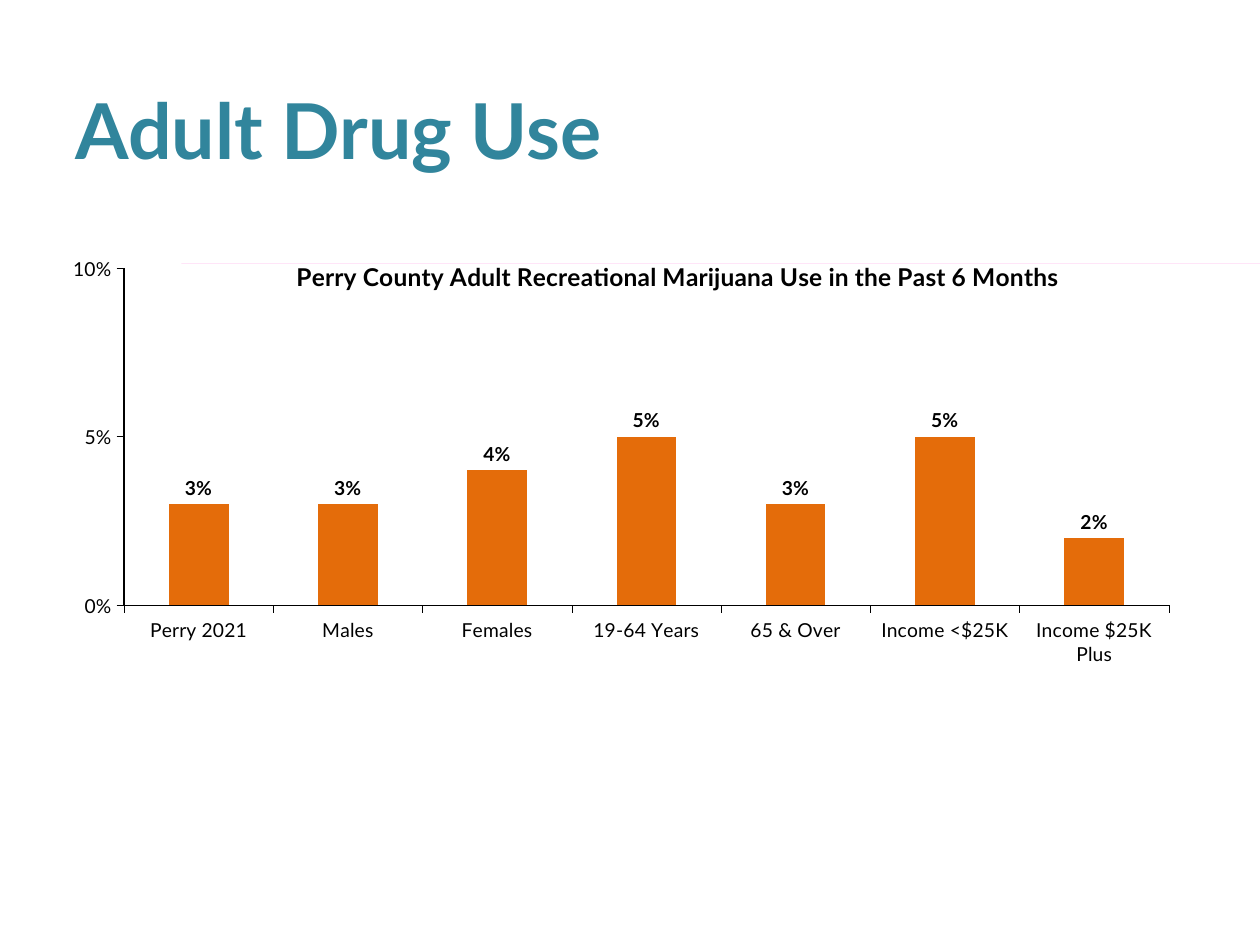
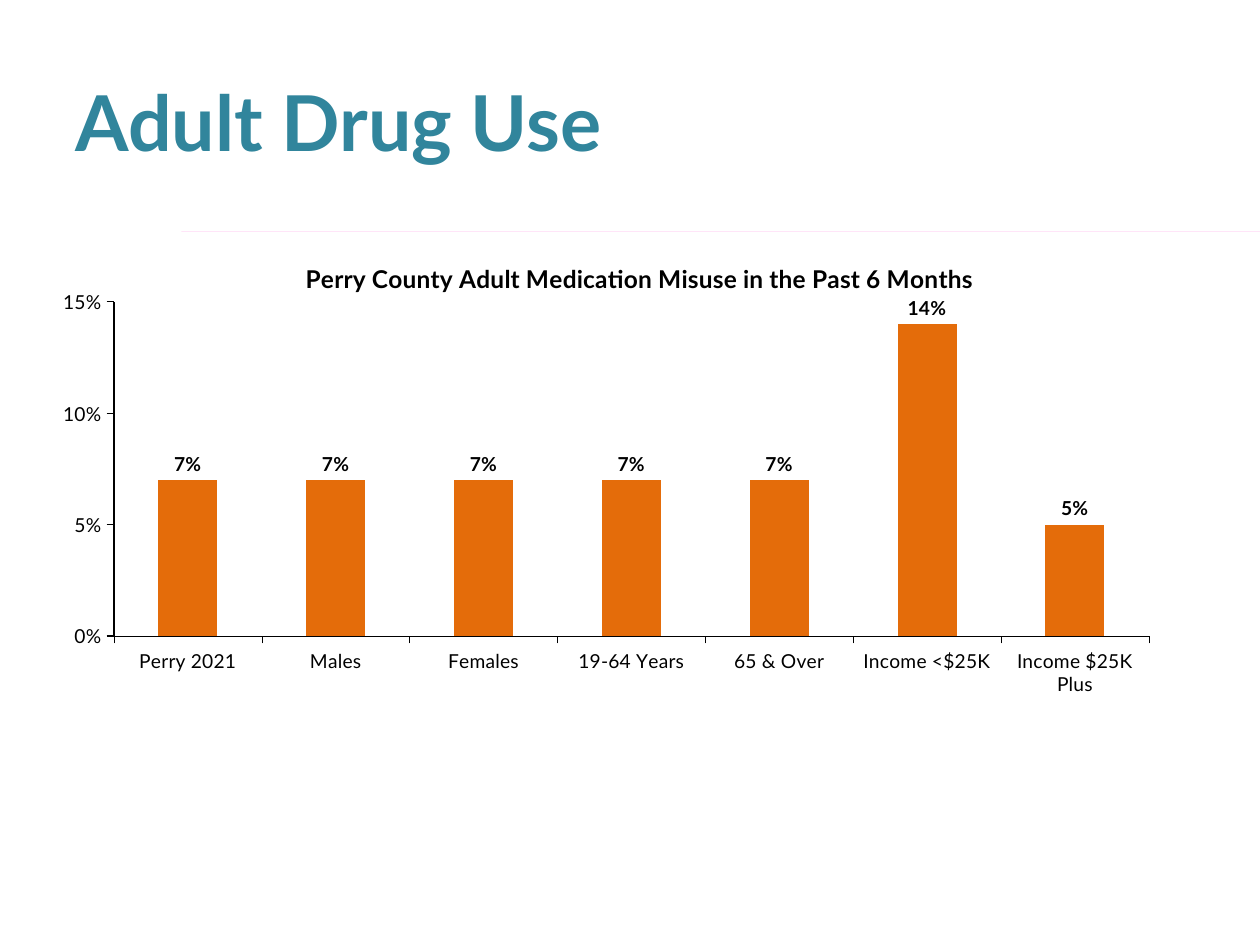
from pptx import Presentation
from pptx.chart.data import CategoryChartData
from pptx.dml.color import RGBColor
from pptx.enum.chart import XL_CHART_TYPE, XL_LABEL_POSITION, XL_TICK_LABEL_POSITION, XL_TICK_MARK
from pptx.enum.shapes import MSO_SHAPE
from pptx.enum.text import MSO_ANCHOR
from pptx.oxml import parse_xml
from pptx.oxml.ns import nsdecls
from pptx.util import Inches, Pt

# Shared style
FONT = "Lato"
TEAL = "31859C"
ORANGE = "E46C0A"
PINK = "FF33CC"
BLACK = "000000"
SLIDE_TITLE = "Adult Drug Use"
PERCENT = "0%"
GROUPS = ["Perry 2021", "Males", "Females", "19-64 Years", "65 & Over",
          "Income <$25K", "Income $25K Plus"]
PLOT_AREA = {"x": 0.045, "y": 0.13, "w": 0.94, "h": 0.725}


def color(hex_code):
    return RGBColor.from_string(hex_code)


def box(left, top, width, height):
    return [Inches(length) for length in (left, top, width, height)]


def style_font(font, size, hex_code=BLACK, bold=False):
    font.name = FONT
    font.size = Pt(size)
    font.bold = bold
    font.color.rgb = color(hex_code)


def manual_layout(fractions, inner=False):
    """Layout element that places a chart part by fractions of the chart."""
    target = '<c:layoutTarget val="inner"/>' if inner else ""
    modes = "".join(f'<c:{key}Mode val="edge"/>' for key in "xy")
    values = "".join(f'<c:{key} val="{value}"/>' for key, value in fractions.items())
    return parse_xml(f'<c:layout {nsdecls("c")}><c:manualLayout>'
                     f"{target}{modes}{values}</c:manualLayout></c:layout>")


def add_title(slide, position):
    frame = slide.shapes.add_textbox(*box(*position)).text_frame
    frame.word_wrap = True
    frame.vertical_anchor = MSO_ANCHOR.MIDDLE
    paragraph = frame.paragraphs[0]
    paragraph.text = SLIDE_TITLE
    style_font(paragraph.font, 44, TEAL, bold=True)


def add_rule(slide, top):
    rule = slide.shapes.add_shape(MSO_SHAPE.RECTANGLE, *box(1.44, top, 10, 0))
    rule.shadow.inherit = False
    rule.fill.solid()
    rule.fill.fore_color.rgb = color(PINK)
    rule.line.fill.background()


def style_axis(axis, line_width):
    axis.has_major_gridlines = False
    axis.major_tick_mark = XL_TICK_MARK.OUTSIDE
    axis.minor_tick_mark = XL_TICK_MARK.NONE
    axis.format.line.color.rgb = color(BLACK)
    axis.format.line.width = Pt(line_width)
    style_font(axis.tick_labels.font, 11)


def add_chart_title(chart, text, place):
    chart.has_title = True
    title = chart.chart_title
    title.include_in_layout = False
    paragraph = title.text_frame.paragraphs[0]
    paragraph.text = text
    style_font(paragraph.font, 14, bold=True)
    element = title._element
    for layout in element.findall("{*}layout"):
        element.remove(layout)
    element.find("{*}tx").addnext(manual_layout(place))


def add_percent_chart(slide, position, title, title_place, values, maximum):
    data = CategoryChartData(number_format=PERCENT)
    data.categories = GROUPS
    data.add_series("Series 1", values)
    chart = slide.shapes.add_chart(XL_CHART_TYPE.COLUMN_CLUSTERED, *box(*position), data).chart
    chart.has_legend = False
    style_font(chart.font, 10, bold=True)
    add_chart_title(chart, title, title_place)

    # Axes
    style_axis(chart.category_axis, 0.19)
    chart.category_axis.tick_label_position = XL_TICK_LABEL_POSITION.LOW
    value_axis = chart.value_axis
    style_axis(value_axis, 0.75)
    value_axis.minimum_scale = 0
    value_axis.maximum_scale = maximum
    value_axis.major_unit = 0.05
    value_axis.tick_labels.number_format = PERCENT
    value_axis.tick_labels.number_format_is_linked = False

    # Columns and their labels
    plot = chart.plots[0]
    plot.vary_by_categories = False
    plot.gap_width = 150
    fill = plot.series[0].format.fill
    fill.solid()
    fill.fore_color.rgb = color(ORANGE)
    plot.has_data_labels = True
    labels = plot.data_labels
    labels.show_value = True
    labels.position = XL_LABEL_POSITION.OUTSIDE_END
    labels.number_format = PERCENT
    labels.number_format_is_linked = False
    style_font(labels.font, 11, bold=True)

    # Plot area position
    plot_area = chart._chartSpace.chart.plotArea
    for layout in plot_area.findall("{*}layout"):
        plot_area.remove(layout)
    plot_area.insert(0, manual_layout(PLOT_AREA, inner=True))


def add_survey_slide(presentation, title_position, rule_top, **chart_details):
    slide = presentation.slides.add_slide(presentation.slide_layouts[6])
    add_title(slide, title_position)
    add_rule(slide, rule_top)
    add_percent_chart(slide, **chart_details)


def main():
    presentation = Presentation()
    presentation.slide_width = Inches(10)
    presentation.slide_height = Inches(7.5)

    # Marijuana use
    add_survey_slide(
        presentation, (0.5, 0.4, 8.92, 1.25), 2.09,
        position=(0.58, 1.65, 8.83, 3.69),
        title="Perry County Adult Recreational Marijuana Use in the Past 6 Months",
        title_place={"x": 0.196, "y": 0.1},
        values=[0.03, 0.03, 0.04, 0.05, 0.03, 0.05, 0.02],
        maximum=0.1)

    # Medication misuse
    add_survey_slide(
        presentation, (0.5, 0.33, 9, 1.25), 1.84,
        position=(0.5, 1.92, 8.75, 3.66),
        title="Perry County Adult Medication Misuse in the Past 6 Months",
        title_place={"x": 0.215, "y": 0.03},
        values=[0.07, 0.07, 0.07, 0.07, 0.07, 0.14, 0.05],
        maximum=0.15)

    presentation.save("out.pptx")


if __name__ == "__main__":
    main()
